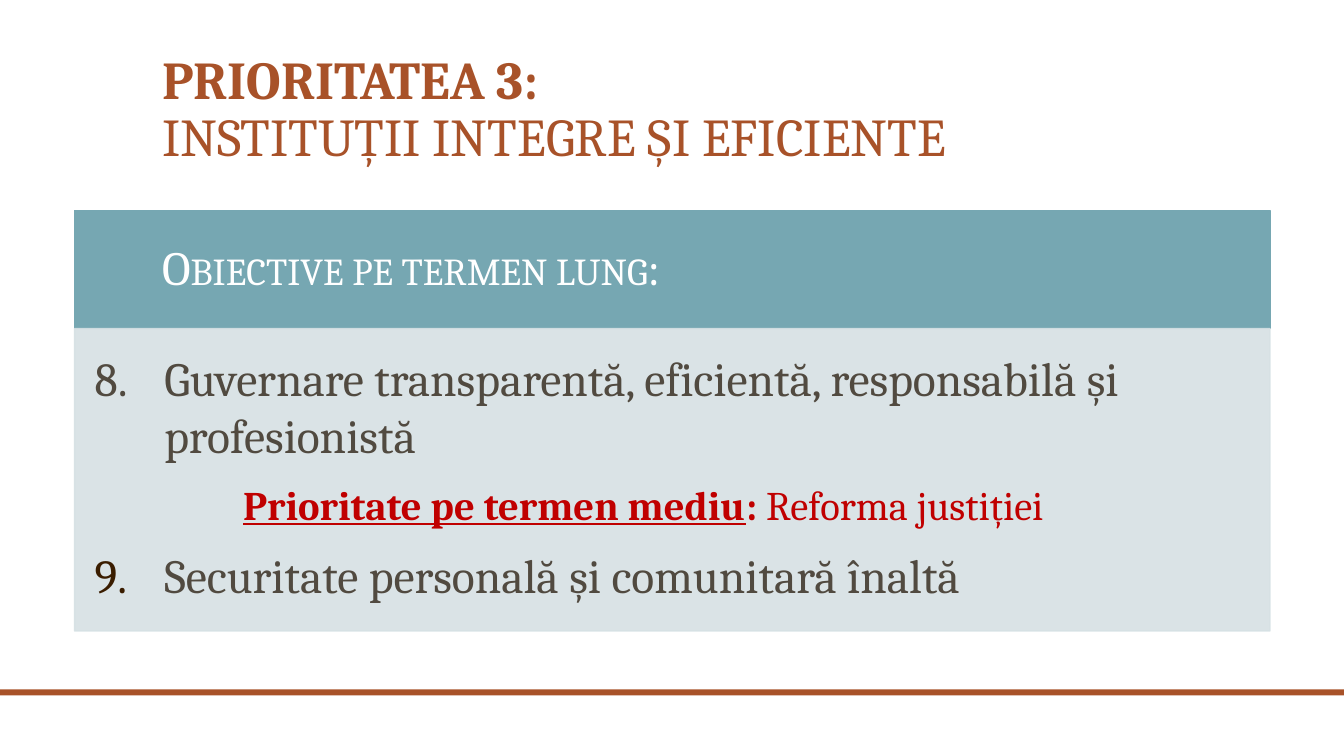
import pptx
import pptx.dml.color
import pptx.enum.shapes
import pptx.enum.text
import pptx.oxml.ns
import pptx.util
from lxml import etree

Pt = pptx.util.Pt
ANCHOR = pptx.enum.text.MSO_ANCHOR

FONT = "Cambria"
RUST = "A85229"
TEAL = "76A7B2"
PALE_TEAL = "D6E1E4"
WHITE = "FFFFFF"
DARK_TEXT = "514A40"
NUMBER_BROWN = "3A1D00"
RED = "C00000"

PANEL_LEFT, PANEL_WIDTH = 53.3, 853.9
HEADER_TOP, HEADER_HEIGHT = 150.5, 84.2
BODY_HEIGHT = 216
NUMBER_INDENT = 49.7
PRIORITY_INDENT = 106


def rgb(color):
    return pptx.dml.color.RGBColor.from_string(color)


def add_child(parent, tag, **attributes):
    child = etree.SubElement(parent, pptx.oxml.ns.qn(tag))
    for name, value in attributes.items():
        child.set(name, str(value))
    return child


def set_opacity(shape, percent):
    """Apply one opacity to the fill and the outline."""
    for color in shape._element.spPr.iter(pptx.oxml.ns.qn("a:srgbClr")):
        add_child(color, "a:alpha", val=percent * 1000)


def add_rectangle(slide, left, top, width, height, color, outlined=True):
    shape = slide.shapes.add_shape(
        pptx.enum.shapes.MSO_SHAPE.RECTANGLE, Pt(left), Pt(top), Pt(width), Pt(height))
    shape.shadow.inherit = False
    shape.fill.solid()
    shape.fill.fore_color.rgb = rgb(color)
    if outlined:
        shape.line.color.rgb = rgb(color)
        shape.line.width = Pt(1)
    else:
        shape.line.fill.background()
    return shape


def prepare_text(shape, anchor, left, top, right, bottom):
    """Set wrapping, anchor and margins, and return the text frame."""
    frame = shape.text_frame
    frame.word_wrap = True
    frame.vertical_anchor = anchor
    frame.margin_left, frame.margin_top = Pt(left), Pt(top)
    frame.margin_right, frame.margin_bottom = Pt(right), Pt(bottom)
    return frame


def format_paragraph(paragraph, line_spacing=1.0, space_after=0):
    paragraph.alignment = pptx.enum.text.PP_ALIGN.LEFT
    paragraph.line_spacing = line_spacing
    paragraph.space_after = Pt(space_after)


def add_run(paragraph, text, size, color, bold=False, underline=False, small_caps=False):
    run = paragraph.add_run()
    run.text = text
    run.font.name = FONT
    run.font.size = Pt(size)
    run.font.color.rgb = rgb(color)
    run.font.bold = bold
    run.font.underline = underline
    if small_caps:
        run.font._element.set("cap", "small")


def set_indent(paragraph, left, first_line=0):
    properties = paragraph._p.get_or_add_pPr()
    properties.set("marL", str(Pt(left)))
    properties.set("indent", str(Pt(first_line)))
    return properties


def add_objective(paragraph, number, text, number_color):
    properties = set_indent(paragraph, NUMBER_INDENT, -NUMBER_INDENT)
    bullet_color = add_child(properties, "a:buClr")
    add_child(bullet_color, "a:srgbClr", val=number_color)
    add_child(properties, "a:buFont", typeface="+mj-lt")
    add_child(properties, "a:buAutoNum", type="arabicPeriod", startAt=number)
    format_paragraph(paragraph, space_after=12)
    add_run(paragraph, text, 34, DARK_TEXT)


def add_priority(paragraph, label, text):
    set_indent(paragraph, PRIORITY_INDENT)
    format_paragraph(paragraph, line_spacing=0.9, space_after=12)
    paragraph.space_before = Pt(4)
    add_run(paragraph, label, 29, RED, bold=True, underline=True)
    add_run(paragraph, ": ", 29, RED, bold=True)
    add_run(paragraph, text, 29, RED)


def add_title(slide, heading, subject):
    box = slide.shapes.add_textbox(Pt(108.7), Pt(33.8), Pt(788.4), Pt(90))
    frame = prepare_text(box, ANCHOR.BOTTOM, 7.2, 3.6, 7.2, 3.6)
    paragraph = frame.paragraphs[0]
    format_paragraph(paragraph, line_spacing=0.9)
    add_run(paragraph, heading, 38, RUST, bold=True)
    paragraph.add_line_break()
    add_run(paragraph, subject, 38, RUST)


def add_header(slide, text):
    header = add_rectangle(slide, PANEL_LEFT, HEADER_TOP, PANEL_WIDTH, HEADER_HEIGHT, TEAL)
    frame = prepare_text(header, ANCHOR.MIDDLE, 62.6, 10.8, 18.7, 10.8)
    paragraph = frame.paragraphs[0]
    format_paragraph(paragraph, line_spacing=0.9)
    add_run(paragraph, text, 34, WHITE, small_caps=True)
    add_run(paragraph, ":", 34, WHITE)


def add_objectives(slide):
    body = add_rectangle(
        slide, PANEL_LEFT, HEADER_TOP + HEADER_HEIGHT, PANEL_WIDTH, BODY_HEIGHT, PALE_TEAL)
    set_opacity(body, 90)
    frame = prepare_text(body, ANCHOR.TOP, 14.4, 14.4, 18.7, 21.6)
    add_objective(frame.paragraphs[0], 8,
                  "Guvernare transparentă, eficientă, responsabilă și profesionistă", DARK_TEXT)
    add_priority(frame.add_paragraph(), "Prioritate pe termen mediu", "Reforma justiției")
    add_objective(frame.add_paragraph(), 9,
                  "Securitate personală și comunitară înaltă", NUMBER_BROWN)


def main():
    presentation = pptx.Presentation()
    presentation.slide_width, presentation.slide_height = Pt(960), Pt(540)
    slide = presentation.slides.add_slide(presentation.slide_layouts[6])
    add_rectangle(slide, 0, 492.5, 960, 4.3, RUST, outlined=False)
    add_header(slide, "Obiective pe termen lung")
    add_objectives(slide)
    add_title(slide, "PRIORITATEA 3:", "INSTITUȚII INTEGRE ȘI EFICIENTE")
    presentation.save("out.pptx")


if __name__ == "__main__":
    main()
